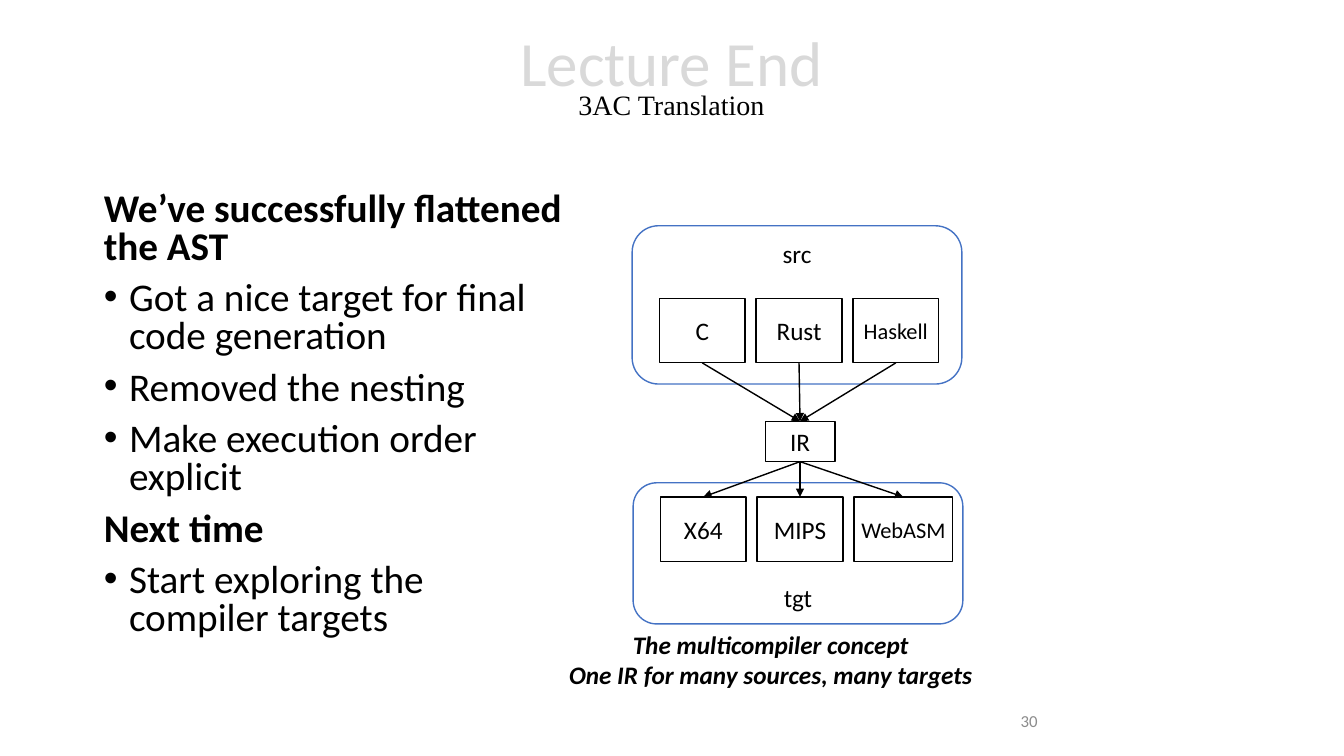
"""Builds the closing lecture slide on translation to three-address code."""
import pptx
import pptx.dml.color
import pptx.enum.shapes
import pptx.enum.text
import pptx.oxml.ns
import pptx.util
from pptx.util import Inches

BLACK = pptx.dml.color.RGBColor(0x00, 0x00, 0x00)
WHITE = pptx.dml.color.RGBColor(0xFF, 0xFF, 0xFF)
BLUE = pptx.dml.color.RGBColor(0x44, 0x72, 0xC4)
PALE_GRAY = pptx.dml.color.RGBColor(0xD9, 0xD9, 0xD9)
GRAY = pptx.dml.color.RGBColor(0x8C, 0x8C, 0x8C)
ALIGN = pptx.enum.text.PP_ALIGN
ANCHOR = pptx.enum.text.MSO_ANCHOR
FIT = pptx.enum.text.MSO_AUTO_SIZE
SHAPE = pptx.enum.shapes.MSO_SHAPE
TOP_SITE, BOTTOM_SITE = 0, 2


class LecturePage:
    font = "Calibri"
    line_width = pptx.util.Pt(1)

    def __init__(self, deck):
        self.page = deck.slides.add_slide(deck.slide_layouts[1])

    def add_span(self, para, text, size, color=BLACK, bold=False, italic=False, font=None):
        span = para.add_run()
        span.text = text
        span.font.name = font or self.font
        span.font.size = pptx.util.Pt(size)
        span.font.color.rgb = color
        span.font.bold = bold
        span.font.italic = italic

    def add_element(self, parent, tag, **attributes):
        parent.append(parent.makeelement(pptx.oxml.ns.qn(tag), attributes))

    def place(self, box, left, top, width, height):
        box.left, box.top = Inches(left), Inches(top)
        box.width, box.height = Inches(width), Inches(height)

    def title(self, heading, topic):
        box = self.page.shapes.title
        self.place(box, 2.35, 0.09, 8.62, 1.45)
        frame = box.text_frame
        frame.auto_size = FIT.NONE
        frame.vertical_anchor = ANCHOR.MIDDLE
        para = frame.paragraphs[0]
        para.alignment = ALIGN.CENTER
        para.line_spacing = 0.7
        self.add_span(para, heading, 45, PALE_GRAY)
        para.add_line_break()
        self.add_span(para, topic, 20, font="Times New Roman")

    def body(self, sections):
        box = self.page.placeholders[1]
        self.place(box, 0.93, 1.86, 4.79, 4.76)
        frame = box.text_frame
        frame.auto_size = FIT.NONE
        lines = []
        for heading, points in sections:
            lines.append((heading, True))
            lines.extend((point, False) for point in points)
        for index, (text, is_heading) in enumerate(lines):
            para = frame.add_paragraph() if index else frame.paragraphs[0]
            para.line_spacing = 0.8
            para.space_before = pptx.util.Pt(10)
            self.bullet(para, None if is_heading else "•")
            self.add_span(para, text, 28, bold=is_heading)

    def bullet(self, para, mark):
        props = para._p.get_or_add_pPr()
        indent = Inches(0.25) if mark else 0
        props.set("marL", str(indent))
        props.set("indent", str(-indent))
        if mark:
            self.add_element(props, "a:buFont", typeface="Arial")
            self.add_element(props, "a:buChar", char=mark)
        else:
            self.add_element(props, "a:buNone")

    def shape(self, kind, text, place, size=18, line=BLACK, anchor=ANCHOR.MIDDLE, side_inset=0.1):
        box = self.page.shapes.add_shape(kind, *map(Inches, place))
        box.shadow.inherit = False
        box.fill.solid()
        box.fill.fore_color.rgb = WHITE
        box.line.color.rgb = line
        box.line.width = self.line_width
        frame = box.text_frame
        frame.vertical_anchor = anchor
        frame.margin_left = frame.margin_right = Inches(side_inset)
        para = frame.paragraphs[0]
        para.alignment = ALIGN.CENTER
        self.add_span(para, text, size)
        return box

    def arrow(self, start, end):
        line = self.page.shapes.add_connector(
            pptx.enum.shapes.MSO_CONNECTOR.STRAIGHT, 0, 0, 0, 0)
        line.begin_connect(start, BOTTOM_SITE)
        line.end_connect(end, TOP_SITE)
        line.line.color.rgb = BLACK
        line.line.width = self.line_width
        props = line._element.spPr
        self.add_element(props.get_or_add_ln(), "a:tailEnd", type="triangle")
        self.add_element(props, "a:effectLst")

    def text(self, lines, place, size, align, wrap=True, **style):
        box = self.page.shapes.add_textbox(*map(Inches, place))
        frame = box.text_frame
        frame.word_wrap = wrap
        frame.vertical_anchor = ANCHOR.MIDDLE
        for index, line in enumerate(lines):
            para = frame.add_paragraph() if index else frame.paragraphs[0]
            para.alignment = align
            self.add_span(para, line, size, **style)


def draw_multicompiler(page):
    page.shape(SHAPE.ROUNDED_RECTANGLE, "tgt", (6.28, 4.79, 3.27, 1.4),
               line=BLUE, anchor=ANCHOR.BOTTOM)
    page.shape(SHAPE.ROUNDED_RECTANGLE, "src", (6.27, 2.24, 3.27, 1.57),
               line=BLUE, anchor=ANCHOR.TOP)
    rows = [
        (6.54, 2.96, [("C", 18, 0.85, 0.1), ("Rust", 18, 0.85, 0.1), ("Haskell", 16, 0.85, 0.1)]),
        (6.55, 4.93, [("X64", 18, 0.85, 0.1), ("MIPS", 18, 0.85, 0.1), ("WebASM", 16, 0.98, 0)]),
    ]
    sources, targets = [
        [page.shape(SHAPE.RECTANGLE, name, (left + 0.96 * column, top, width, 0.64),
                    size, side_inset=inset)
         for column, (name, size, width, inset) in enumerate(languages)]
        for left, top, languages in rows
    ]
    middle = page.shape(SHAPE.RECTANGLE, "IR", (7.59, 4.18, 0.69, 0.4))
    for source in sources:
        page.arrow(source, middle)
    for target in targets:
        page.arrow(middle, target)
    page.text(["The multicompiler concept", "One IR for many sources, many targets"],
              (5.53, 6.19, 4.23, 0.71), 18, ALIGN.CENTER, wrap=False, bold=True, italic=True)


def main():
    deck = pptx.Presentation()
    deck.slide_width, deck.slide_height = Inches(13.33), Inches(7.5)
    page = LecturePage(deck)
    page.title("Lecture End", "3AC Translation")
    page.body([
        ("We’ve successfully flattened the AST",
         ["Got a nice target for final code generation", "Removed the nesting",
          "Make execution order explicit"]),
        ("Next time", ["Start exploring the compiler targets"]),
    ])
    page.text(["30"], (7.39, 6.95, 3, 0.4), 12, ALIGN.RIGHT, color=GRAY)
    draw_multicompiler(page)
    deck.save("out.pptx")


if __name__ == "__main__":
    main()
